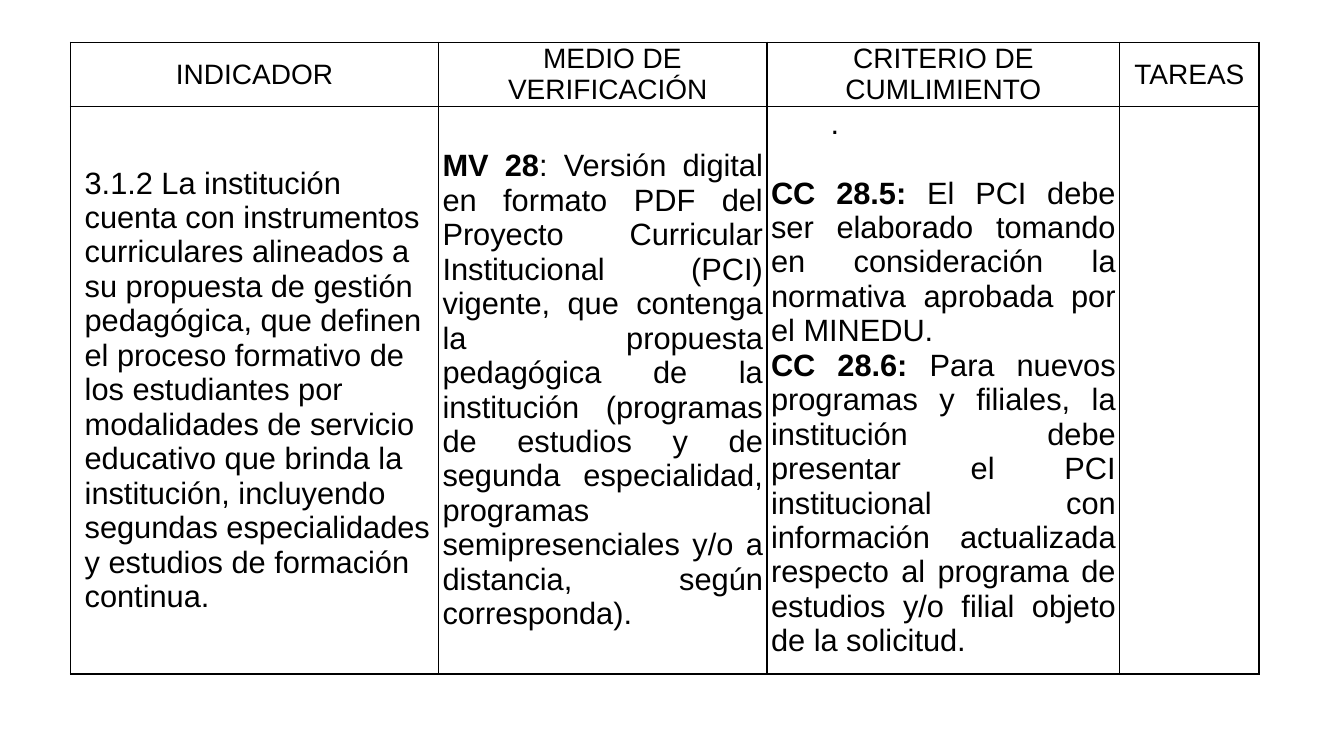
"""Build a slide with the verification table of indicator 3.1.2."""

import dataclasses

import lxml.etree
import pptx
import pptx.dml.color
import pptx.enum.text
import pptx.oxml.ns
import pptx.table
import pptx.text.text
import pptx.util

Pt = pptx.util.Pt
Align = pptx.enum.text.PP_ALIGN
Anchor = pptx.enum.text.MSO_ANCHOR

BLACK = pptx.dml.color.RGBColor(0x00, 0x00, 0x00)
FONT_NAME = "Arial"
HEADER_SIZE = 20
BODY_SIZE = 22
BODY_LINE = 25.3
COLUMN_WIDTHS = (262.8, 234.7, 252, 99.4)
ROW_HEIGHTS = (45.7, 405.5)
TABLE_LEFT = 50.4
TABLE_TOP = 30.2


@dataclasses.dataclass(frozen=True)
class Entry:
    """One paragraph of a cell, with an optional bold lead."""

    text: str
    lead: str = ""
    align: Align = Align.JUSTIFY
    margin: float = 0
    indent: float = 0
    space_before: float = 0


@dataclasses.dataclass(frozen=True)
class CellContent:
    """The paragraphs of a cell and how they sit in it."""

    entries: tuple[Entry, ...]
    size: float = BODY_SIZE
    side_inset: float = 2.9
    anchor: Anchor = Anchor.MIDDLE


def header(text: str, margin: float = 0, indent: float = 0) -> CellContent:
    """Describe a centred column heading."""
    entry = Entry(text, align=Align.CENTER, margin=margin, indent=indent)
    return CellContent((entry,), size=HEADER_SIZE, side_inset=3.6)


ROWS = (
    (
        header("INDICADOR", 7.2, -7.2),
        header("MEDIO DE VERIFICACIÓN", 7.2, 6.5),
        header("CRITERIO DE CUMLIMIENTO"),
        header("TAREAS"),
    ),
    (
        CellContent((Entry(
            "3.1.2 La institución cuenta con instrumentos curriculares alineados a su "
            "propuesta de gestión pedagógica, que definen el proceso formativo de los "
            "estudiantes por modalidades de servicio educativo que brinda la institución, "
            "incluyendo segundas especialidades y estudios de formación continua.",
            align=Align.LEFT, margin=7.2),)),
        CellContent((Entry(
            ": Versión digital en formato PDF del Proyecto Curricular Institucional (PCI) "
            "vigente, que contenga la propuesta pedagógica de la institución (programas de "
            "estudios y de segunda especialidad, programas semipresenciales y/o a "
            "distancia, según corresponda).",
            lead="MV 28"),)),
        CellContent((
            Entry(".", margin=43.2, indent=-0.7),
            Entry(
                " El PCI debe ser elaborado tomando en consideración la normativa "
                "aprobada por el MINEDU.",
                lead="CC 28.5:", space_before=BODY_LINE),
            Entry(
                "Para nuevos programas y filiales, la institución debe presentar el PCI "
                "institucional con información actualizada respecto al programa de "
                "estudios y/o filial objeto de la solicitud.",
                lead="CC 28.6: "),
        ), anchor=Anchor.TOP),
        CellContent(()),
    ),
)


def add_text(paragraph: pptx.text.text._Paragraph, text: str, *,
             size: float, bold: bool = False) -> None:
    """Add a formatted run to a paragraph."""
    run = paragraph.add_run()
    run.text = text
    run.font.name = FONT_NAME
    run.font.size = Pt(size)
    run.font.bold = bold
    run.font.color.rgb = BLACK


def add_borders(cell: pptx.table._Cell) -> None:
    """Draw a thin black line on each side of a cell."""
    qn = pptx.oxml.ns.qn
    properties = cell._tc.get_or_add_tcPr()
    for side in ("a:lnL", "a:lnR", "a:lnT", "a:lnB"):
        line = lxml.etree.SubElement(properties, qn(side), w=str(Pt(1)))
        fill = lxml.etree.SubElement(line, qn("a:solidFill"))
        lxml.etree.SubElement(fill, qn("a:srgbClr"), val=str(BLACK))


def fill_cell(cell: pptx.table._Cell, content: CellContent) -> None:
    """Format a cell and write its paragraphs."""
    add_borders(cell)
    cell.fill.background()
    cell.margin_left = cell.margin_right = Pt(content.side_inset)
    cell.margin_top = cell.margin_bottom = Pt(0)
    cell.vertical_anchor = content.anchor
    frame = cell.text_frame
    for index, entry in enumerate(content.entries):
        paragraph = frame.add_paragraph() if index else frame.paragraphs[0]
        paragraph.alignment = entry.align
        paragraph.line_spacing = 1.0
        if entry.space_before:
            paragraph.space_before = Pt(entry.space_before)
        properties = paragraph._p.get_or_add_pPr()
        properties.set("marL", str(Pt(entry.margin)))
        properties.set("indent", str(Pt(entry.indent)))
        if entry.lead:
            add_text(paragraph, entry.lead, size=content.size, bold=True)
        add_text(paragraph, entry.text, size=content.size)


def main() -> None:
    """Create the slide and save it."""
    presentation = pptx.Presentation()
    presentation.slide_width = Pt(960)
    presentation.slide_height = Pt(540)
    slide = presentation.slides.add_slide(presentation.slide_layouts[6])
    table = slide.shapes.add_table(
        len(ROW_HEIGHTS), len(COLUMN_WIDTHS), Pt(TABLE_LEFT), Pt(TABLE_TOP),
        Pt(sum(COLUMN_WIDTHS)), Pt(sum(ROW_HEIGHTS))).table
    table.first_row = False
    table.horz_banding = False
    for column, width in zip(table.columns, COLUMN_WIDTHS):
        column.width = Pt(width)
    for row, height, contents in zip(table.rows, ROW_HEIGHTS, ROWS):
        row.height = Pt(height)
        for cell, content in zip(row.cells, contents):
            fill_cell(cell, content)
    presentation.save("out.pptx")


if __name__ == "__main__":
    main()
